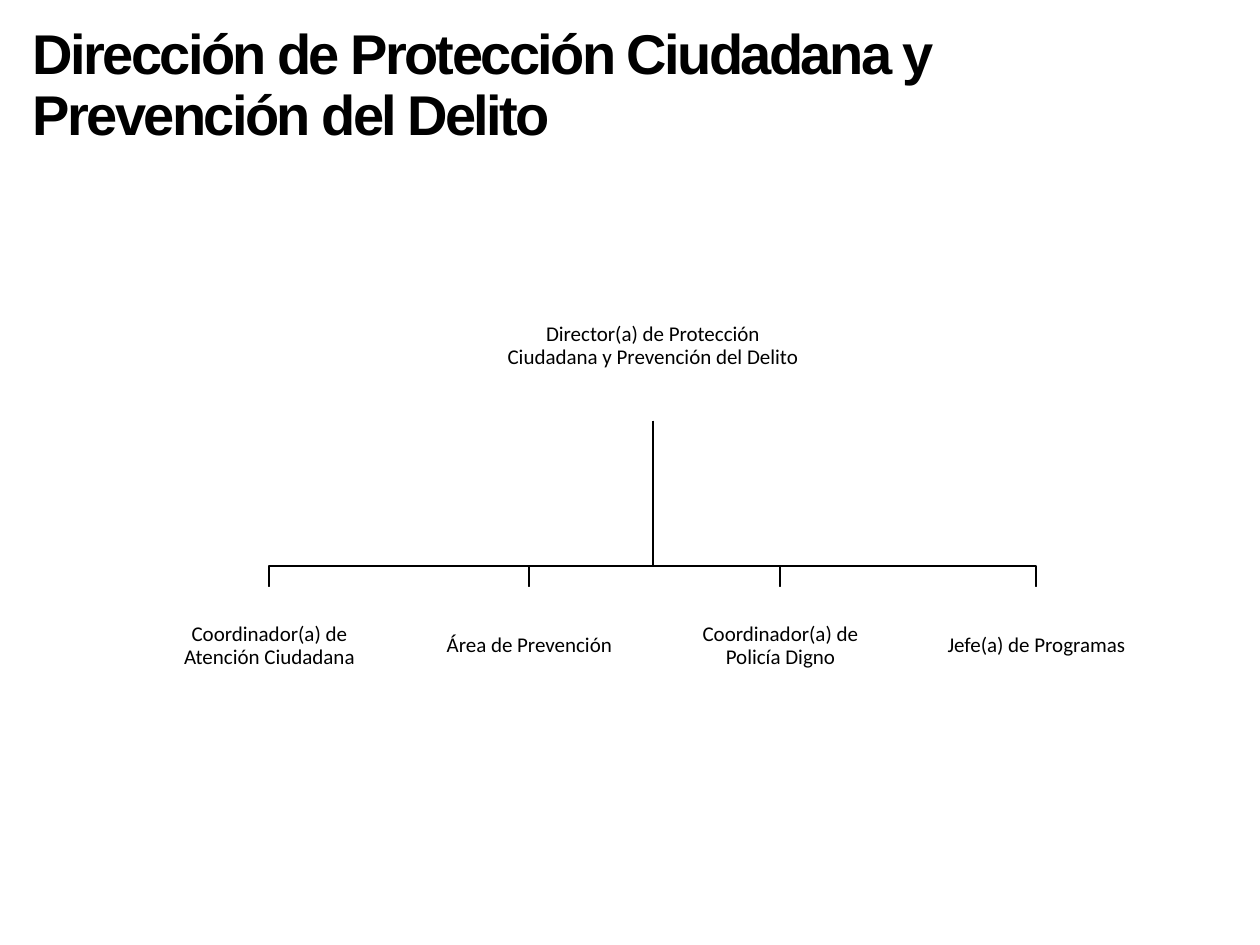
from dataclasses import dataclass

from pptx import Presentation
from pptx.dml.color import RGBColor
from pptx.enum.shapes import MSO_SHAPE
from pptx.enum.text import MSO_ANCHOR, MSO_AUTO_SIZE, PP_ALIGN
from pptx.util import Pt

TITLE = "Dirección de Protección Ciudadana y Prevención del Delito"
DIRECTOR = "Director(a) de Protección Ciudadana y Prevención del Delito"
AREAS = [  # left edge in px, post
    (163, "Coordinador(a) de Atención Ciudadana"),
    (423, "Área de Prevención"),
    (674, "Coordinador(a) de Policía Digno"),
    (930, "Jefe(a) de Programas"),
]

PX = 914400 // 126
PAGE_SIZE = (1260, 945)
TITLE_BOX = (20, 20, 988, 135)
DIRECTOR_BOX = (504, 272, 298, 149)
AREA_TOP, AREA_WIDTH, AREA_HEIGHT = 587, 213, 118
BUS_Y = 566


@dataclass(frozen=True)
class Theme:
    ink: RGBColor = RGBColor(0, 0, 0)
    paper: RGBColor = RGBColor(255, 255, 255)
    title_font: str = "Arial"
    title_size: int = 32
    title_tracking: int = -150  # hundredths of a point
    label_font: str = "Calibri"
    label_size: int = 12
    line_width: int = 1
    line_spacing: float = 0.9


THEME = Theme()


def px(*lengths):
    return [length * PX for length in lengths]


def write(shape, text, font, size, align, bold=False):
    frame = shape.text_frame
    frame.word_wrap = True
    frame.text = text
    para = frame.paragraphs[0]
    para.alignment = align
    para.line_spacing = THEME.line_spacing
    para.font.name = font
    para.font.size = Pt(size)
    para.font.bold = bold
    para.font.color.rgb = THEME.ink
    return frame


def add_post(page, box, text, filled):
    shape = page.shapes.add_shape(MSO_SHAPE.RECTANGLE, *px(*box))
    shape.shadow.inherit = False
    shape.line.fill.background()
    if filled:
        shape.fill.solid()
        shape.fill.fore_color.rgb = THEME.paper
    else:
        shape.fill.background()
    frame = write(shape, text, THEME.label_font, THEME.label_size, PP_ALIGN.CENTER)
    frame.vertical_anchor = MSO_ANCHOR.MIDDLE
    frame.margin_left = frame.margin_right = PX
    frame.margin_top = frame.margin_bottom = PX


def add_branch(page, start, end):
    """Draw a line down to the shared bar, along it, and down to the post."""
    (start_x, start_y), (end_x, end_y) = start, end
    builder = page.shapes.build_freeform(start_x, start_y, scale=PX)
    builder.add_line_segments(
        [(start_x, BUS_Y), (end_x, BUS_Y), (end_x, end_y)], close=False)
    branch = builder.convert_to_shape()
    branch.shadow.inherit = False
    branch.fill.background()
    branch.line.color.rgb = THEME.ink
    branch.line.width = Pt(THEME.line_width)


def add_title(page):
    title = page.shapes.title
    title.left, title.top, title.width, title.height = px(*TITLE_BOX)
    frame = write(title, TITLE, THEME.title_font, THEME.title_size,
                  PP_ALIGN.LEFT, bold=True)
    frame.vertical_anchor = MSO_ANCHOR.TOP
    frame.auto_size = MSO_AUTO_SIZE.SHAPE_TO_FIT_TEXT
    span = frame.paragraphs[0].runs[0]
    span._r.get_or_add_rPr().set("spc", str(THEME.title_tracking))


def main():
    deck = Presentation()
    deck.slide_width, deck.slide_height = px(*PAGE_SIZE)
    page = deck.slides.add_slide(deck.slide_layouts[5])
    add_title(page)

    left, top, width, height = DIRECTOR_BOX
    trunk = (left + width // 2, top + height)
    for area_left, _ in AREAS:
        add_branch(page, trunk, (area_left + AREA_WIDTH // 2, AREA_TOP))

    add_post(page, DIRECTOR_BOX, DIRECTOR, filled=False)
    for area_left, post in AREAS:
        add_post(page, (area_left, AREA_TOP, AREA_WIDTH, AREA_HEIGHT), post, filled=True)

    deck.save("out.pptx")


if __name__ == "__main__":
    main()
